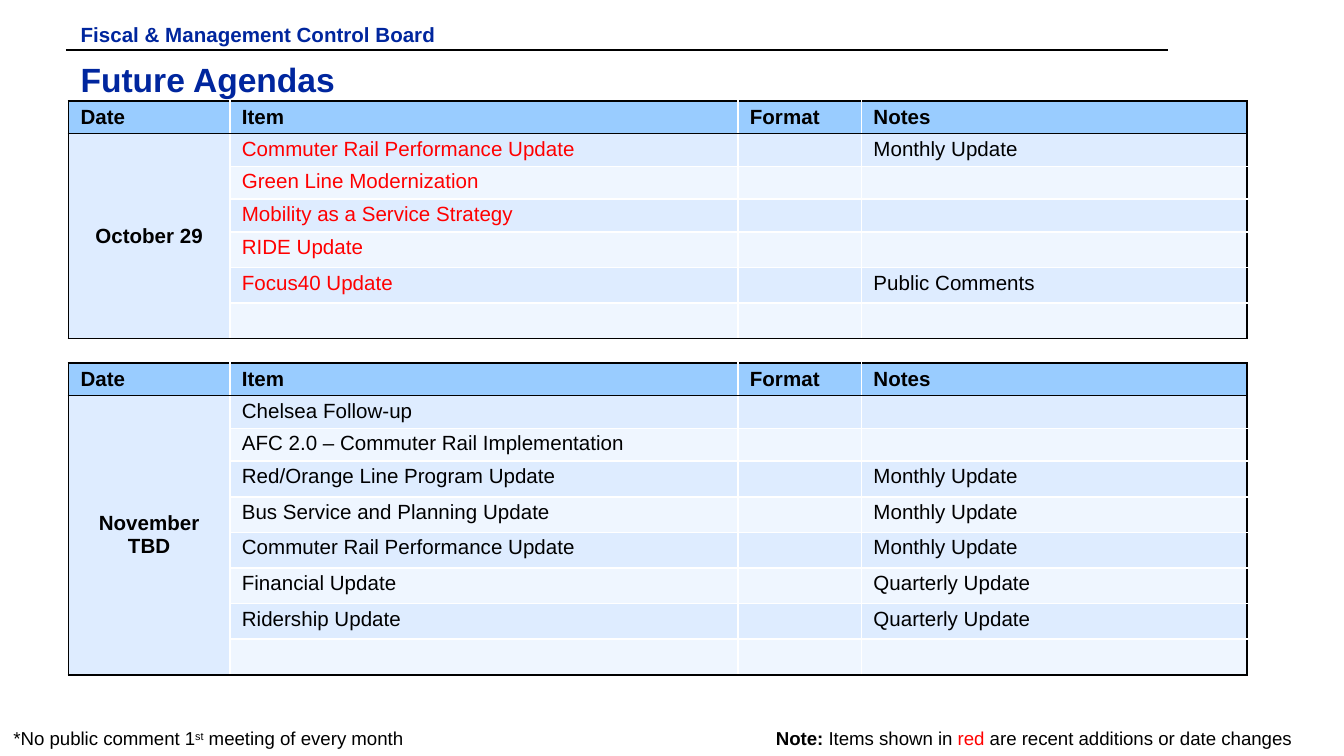
import pptx
import pptx.dml.color
import pptx.enum.shapes
import pptx.enum.text
import pptx.oxml
import pptx.oxml.ns
import pptx.util
from lxml import etree

Inches = pptx.util.Inches
Pt = pptx.util.Pt
RGBColor = pptx.dml.color.RGBColor
ANCHOR = pptx.enum.text.MSO_ANCHOR
ALIGN = pptx.enum.text.PP_ALIGN
qn = pptx.oxml.ns.qn

NAVY = RGBColor(0x00, 0x26, 0x9E)
BLACK = RGBColor(0, 0, 0)
WHITE = RGBColor(0xFF, 0xFF, 0xFF)
RED = RGBColor(0xFF, 0, 0)
HEADER_BLUE = RGBColor(0x99, 0xCC, 0xFF)
BANDS = (RGBColor(0xDE, 0xEC, 0xFF), RGBColor(0xEF, 0xF6, 0xFF))

FONT = "Arial"
COLUMNS = (1.2, 3.78, 0.92, 2.87)
HEADINGS = ("Date", "Item", "Format", "Notes")
HEADER_ROW, SHORT_ROW, TALL_ROW = Pt(17.5), Pt(17), Pt(19.1)

# Each agenda row: item, note
OCTOBER = [
    ("Commuter Rail Performance Update", "Monthly Update"),
    ("Green Line Modernization", ""),
    ("Mobility as a Service Strategy", ""),
    ("RIDE Update", ""),
    ("Focus40 Update", "Public Comments"),
    ("", ""),
]
NOVEMBER = [
    ("Chelsea Follow-up", ""),
    ("AFC 2.0 – Commuter Rail Implementation", ""),
    ("Red/Orange Line Program Update", "Monthly Update"),
    ("Bus Service and Planning Update", "Monthly Update"),
    ("Commuter Rail Performance Update", "Monthly Update"),
    ("Financial Update", "Quarterly Update"),
    ("Ridership Update", "Quarterly Update"),
    ("", ""),
]


def style(font, size, color, bold=False):
    font.name, font.size, font.bold = FONT, Pt(size), bold
    font.color.rgb = color


def add_text_box(slide, left, top, width, height, wrap=True):
    """Add a text box and return its first paragraph."""
    box = slide.shapes.add_textbox(Inches(left), Inches(top), Inches(width), Inches(height))
    frame = box.text_frame
    frame.word_wrap = wrap
    frame.margin_left = frame.margin_right = Inches(0.09)
    frame.margin_top = frame.margin_bottom = Inches(0.04)
    return frame.paragraphs[0]


def add_heading(slide, left, top):
    # Board name above the rule
    board = add_text_box(slide, left, top, 3.41, 0.19)
    board.text = "Fiscal & Management Control Board"
    style(board.font, 11, NAVY, True)

    # Rule
    rule = slide.shapes.add_connector(
        pptx.enum.shapes.MSO_CONNECTOR.STRAIGHT,
        Inches(left - 0.02), Inches(top + 0.25), Inches(left + 8.18), Inches(top + 0.25))
    rule.line.color.rgb = BLACK
    rule.line.width = Pt(1)
    etree.SubElement(rule._element.spPr, qn("a:effectLst"))

    # Title
    title = add_text_box(slide, left, top + 0.28, 8.36, 0.48)
    title.text = "Future Agendas"
    style(title.font, 18, NAVY, True)


def set_borders(cell, left, right, top, bottom):
    properties = cell._tc.get_or_add_tcPr()
    for side, color in zip("LRTB", (left, right, top, bottom)):
        line = etree.SubElement(properties, qn(f"a:ln{side}"), w=str(Pt(1)))
        fill = etree.SubElement(line, qn("a:solidFill"))
        etree.SubElement(fill, qn("a:srgbClr"), val=str(color))


def add_agenda(slide, left, top, date, entries, short_rows, item_color):
    rows = [HEADINGS] + [(date if i == 0 else "", item, "", note)
                         for i, (item, note) in enumerate(entries)]
    heights = ([HEADER_ROW] + [SHORT_ROW] * short_rows
               + [TALL_ROW] * (len(entries) - short_rows))
    agenda = slide.shapes.add_table(
        len(rows), len(COLUMNS), Inches(left), Inches(top),
        Inches(sum(COLUMNS)), sum(heights)).table
    agenda.horz_banding = False
    for column, width in zip(agenda.columns, COLUMNS):
        column.width = Inches(width)
    for row, height in zip(agenda.rows, heights):
        row.height = height

    last_row, last_column = len(rows) - 1, len(COLUMNS) - 1
    for r, row in enumerate(rows):
        for c, text in enumerate(row):
            cell = agenda.cell(r, c)
            is_header, is_date = r == 0, c == 0 and r > 0
            set_borders(
                cell,
                left=BLACK if c == 0 else WHITE,
                right=BLACK if c == last_column else WHITE,
                top=BLACK if r <= 1 else WHITE,
                bottom=BLACK if r in (0, last_row) or is_date else WHITE)
            cell.fill.solid()
            cell.fill.fore_color.rgb = (
                HEADER_BLUE if is_header else BANDS[0 if is_date else (r - 1) % 2])
            cell.margin_left = cell.margin_right = Inches(0.09)
            cell.margin_top = cell.margin_bottom = Inches(0.03)
            cell.vertical_anchor = ANCHOR.MIDDLE if is_header or is_date else ANCHOR.TOP
            paragraph = cell.text_frame.paragraphs[0]
            if text:
                paragraph.text = text
            else:
                # Keeps an empty row from growing to the default size
                etree.SubElement(paragraph._p, qn("a:endParaRPr"), sz="1100")
            if is_date:
                paragraph.alignment = ALIGN.CENTER
            color = item_color if c == 1 and not is_header else BLACK
            style(paragraph.font, 11, color, is_header or is_date)

    # Date spans all its items
    agenda.cell(1, 0).merge(agenda.cell(last_row, 0))


def add_footnotes(slide, top):
    # Public comment rule
    comment = add_text_box(slide, 0.01, top, 4.16, 0.26)
    for text in ("*No public comment 1", "st", " meeting of every month"):
        run = comment.add_run()
        run.text = text
        if text == "st":
            run.font._element.set("baseline", "30000")
    style(comment.font, 10, BLACK)

    # Colour key
    key = add_text_box(slide, 5.5, top, 4.2, 0.26, wrap=False)
    key.alignment = ALIGN.RIGHT
    for text, color, bold in (("Note: ", BLACK, True),
                              ("Items shown in ", BLACK, False),
                              ("red", RED, False),
                              (" are recent additions or date changes", BLACK, False)):
        run = key.add_run()
        run.text = text
        style(run.font, 10, color, bold)


def main():
    deck = pptx.Presentation()
    # Widescreen, 16:9
    deck.slide_width, deck.slide_height = Inches(10), Inches(10 * 9 / 16)
    slide = deck.slides.add_slide(deck.slide_layouts[6])
    add_heading(slide, 0.51, 0.12)
    add_agenda(slide, 0.51, 0.75, "October 29", OCTOBER, 3, RED)
    add_agenda(slide, 0.51, 2.7, "November TBD", NOVEMBER, 2, BLACK)
    add_footnotes(slide, 5.37)
    deck.save("out.pptx")


if __name__ == "__main__":
    main()
